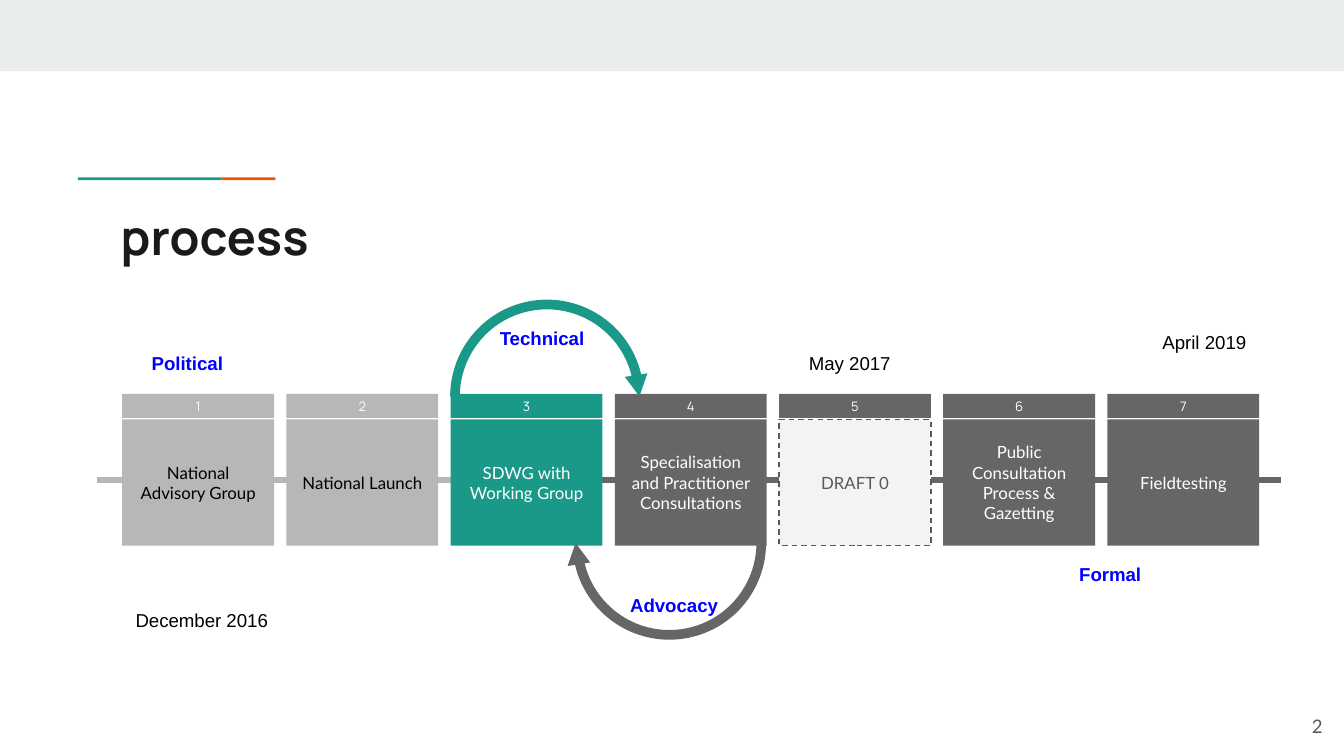
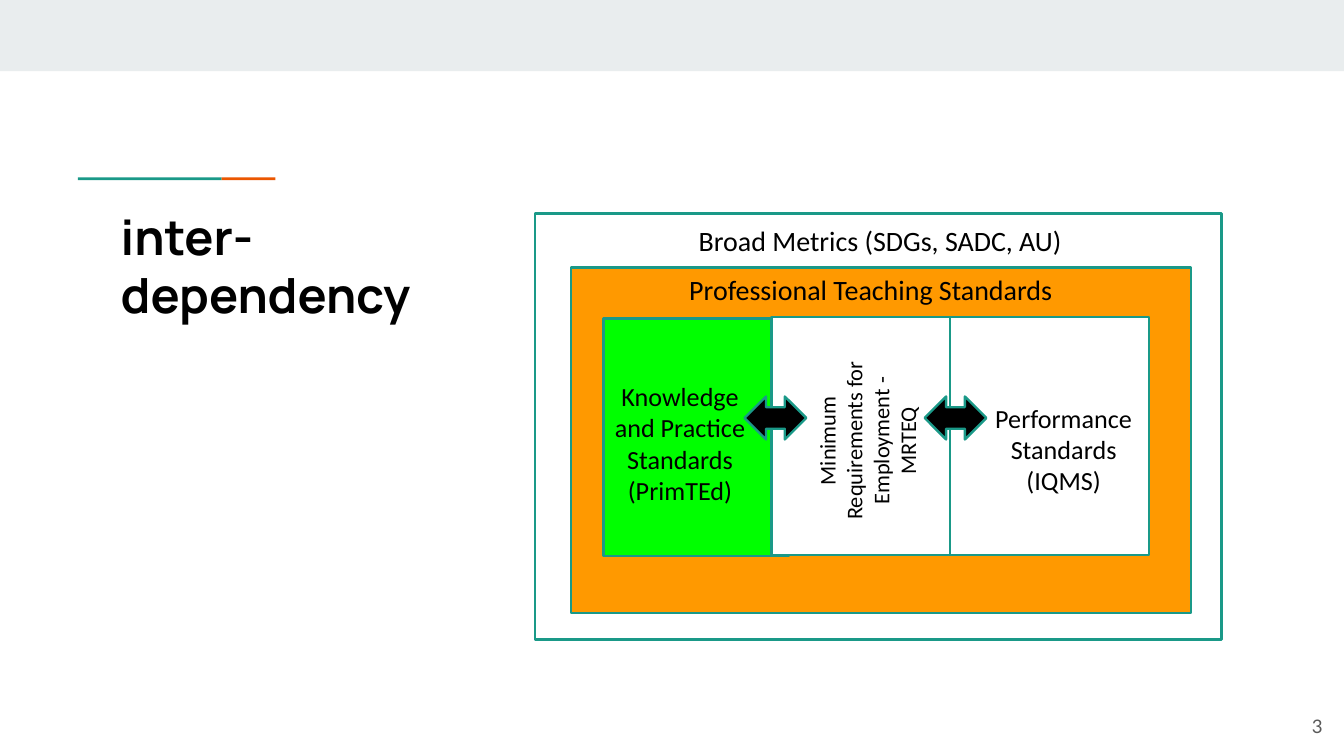
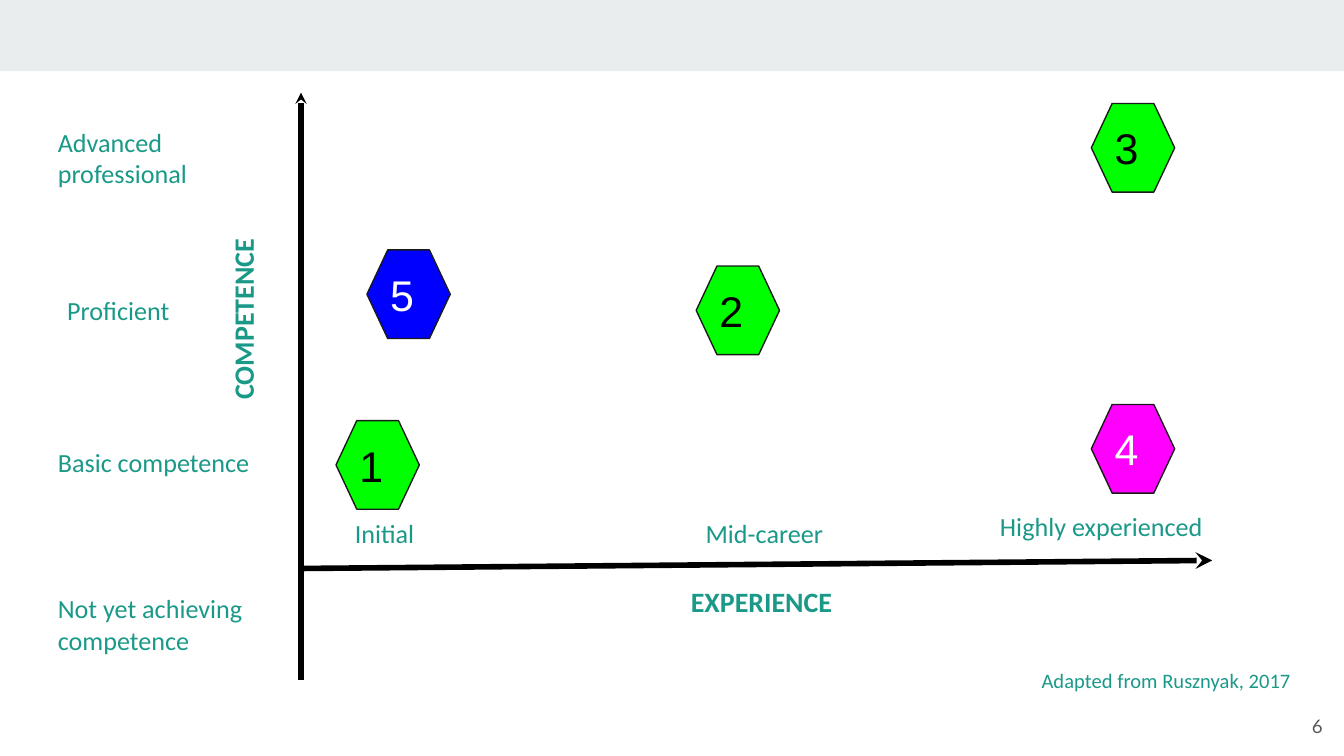
from pptx import Presentation
from pptx.dml.color import RGBColor
from pptx.enum.dml import MSO_LINE
from pptx.enum.shapes import MSO_CONNECTOR, MSO_SHAPE as SHAPE
from pptx.enum.text import MSO_ANCHOR as ANCHOR, PP_ALIGN as ALIGN
from pptx.oxml.ns import qn
from pptx.util import Inches, Pt
from lxml.etree import SubElement

WIDTH = 10
HEIGHT = WIDTH * 9 / 16
COLORS = {
    "white": "FFFFFF", "black": "000000", "ink": "1A1A1A", "band": "E9EDEE",
    "teal": "1A9988", "rust": "EB5600", "light": "B7B7B7", "dark": "666666",
    "text": "595959", "draft": "F3F3F3", "blue": "0000FF", "green": "00FF00",
    "orange": "FF9900", "magenta": "FF00FF",
}
WIDE_INSETS, HEXAGON_INSETS, TIGHT_INSETS = (0.1, 0.1), (0.07, 0.07), (0.07, 0.04)

# Process: name, fill, text colour
STEPS = [
    ("National Advisory Group", "light", "black"),
    ("National Launch", "light", "black"),
    ("SDWG with Working Group", "teal", "white"),
    ("Specialisation and Practitioner Consultations", "dark", "white"),
    ("DRAFT 0", "draft", "text"),
    ("Public Consultation Process & Gazetting", "dark", "white"),
    ("Fieldtesting", "dark", "white"),
]
FIRST_STEP, LAST_STEP, STEP_WIDTH = 0.91, 8.24, 1.13
STEP_PITCH = (LAST_STEP - FIRST_STEP) / (len(STEPS) - 1)
# Colour, arc left and top, arc rotation, arrowhead left and top, arrowhead rotation
LOOPS = [
    ("teal", 3.35, 2.23, 0, 4.66, 2.79, 171.1),
    ("dark", 4.26, 3.32, 180, 4.21, 4.04, 351.1),
]
DATES = [
    ("December 2016", (0.91, 4.41, 2.01, 0.67), ALIGN.LEFT),
    ("April 2019", (7.02, 2.34, 2.35, 0.59), ALIGN.RIGHT),
    ("May 2017", (5.92, 2.5, 0.88, 0.43), ALIGN.LEFT),
]
PHASES = [
    ("Technical", 3.62, 2.31, ALIGN.LEFT),
    ("Advocacy", 4.59, 4.3, ALIGN.LEFT),
    ("Political", 1.03, 2.5, ALIGN.LEFT),
    ("Formal", 7.82, 4.07, ALIGN.CENTER),
]

# Inter-dependency: frame, fill, label, label box, size, rotation; back to front
STANDARDS = [
    ((3.98, 1.59, 5.11, 3.17), "white", "Broad Metrics (SDGs, SADC, AU)",
     (5.03, 1.62, 3.04, 0.27), 15, 0),
    ((4.25, 1.99, 4.61, 2.57), "orange", "Professional Teaching Standards",
     (4.55, 1.99, 3.86, 0.27), 15, 0),
    ((4.49, 2.37, 1.38, 1.77), "green", "Knowledge and Practice Standards (PrimTEd)",
     (4.39, 2.79, 1.34, 1.24), 14, 0),
    ((5.74, 2.36, 1.48, 1.77), "white", "Minimum Requirements for Employment - MRTEQ",
     (5.6, 2.94, 1.5, 0.68), 12, 270),
    ((7.07, 2.36, 1.48, 1.77), "white", "Performance Standards (IQMS)",
     (7.28, 2.95, 1.27, 0.78), 14, 0),
]
LINK_LEFTS = (5.54, 6.88)

# Competence against experience
LEVELS = [
    ("Advanced professional", 0.36, 0.9, 0.53),
    ("Proficient", 0.43, 2.15, 0.3),
    ("Basic competence", 0.36, 3.28, 0.53),
    ("Not yet achieving competence", 0.36, 4.37, 0.76),
]
STAGES = [
    ("Initial", 2.57, 3.81, 0.67),
    ("Mid-career", 5.18, 3.81, 1.38),
    ("Highly experienced", 7.37, 3.76, 1.81),
]
TEACHERS = [
    (2.5, 3.13, "green", "black"),
    (5.18, 1.98, "green", "black"),
    (8.12, 0.77, "green", "black"),
    (8.12, 3.01, "magenta", "white"),
    (2.73, 1.86, "blue", "white"),
]


def color(name):
    return RGBColor.from_string(COLORS[name])


def write(shape, text, font, size, text_color, bold=False, align=ALIGN.LEFT,
          anchor=ANCHOR.TOP, insets=WIDE_INSETS, spacing=None):
    frame = shape.text_frame
    frame.text = text
    frame.word_wrap = True
    frame.vertical_anchor = anchor
    frame.margin_left = frame.margin_right = Inches(insets[0])
    frame.margin_top = frame.margin_bottom = Inches(insets[1])
    paragraph = frame.paragraphs[0]
    paragraph.alignment = align
    paragraph.line_spacing = spacing
    run_font = paragraph.runs[0].font
    run_font.name, run_font.size, run_font.bold = font, Pt(size), bold
    run_font.color.rgb = color(text_color)


def add_text(slide, box, text, font, size, text_color, rotation=0, **style):
    shape = slide.shapes.add_textbox(*map(Inches, box))
    shape.rotation = rotation
    write(shape, text, font, size, text_color, **style)


def add_shape(slide, kind, box, fill, outline=None, weight=1.25, rotation=0):
    shape = slide.shapes.add_shape(kind, *map(Inches, box))
    shape.shadow.inherit = False
    shape.rotation = rotation
    shape.fill.solid()
    shape.fill.fore_color.rgb = color(fill)
    if outline:
        shape.line.color.rgb = color(outline)
        shape.line.width = Pt(weight)
    else:
        shape.line.fill.background()
    return shape


def add_line(slide, start, end, line_color, arrow=None, arrow_size="med"):
    """Draw a straight line; arrow is headEnd (at start) or tailEnd (at end)."""
    line = slide.shapes.add_connector(
        MSO_CONNECTOR.STRAIGHT, *map(Inches, (*start, *end)))
    line.line.color.rgb = color(line_color)
    line.line.width = Pt(3)
    properties = line.element.spPr
    if arrow:
        SubElement(properties.find(qn("a:ln")), qn(f"a:{arrow}"),
                   type="stealth", w=arrow_size, len=arrow_size)
    SubElement(properties, qn("a:effectLst"))


def add_slide(presentation, number):
    slide = presentation.slides.add_slide(presentation.slide_layouts[6])
    add_shape(slide, SHAPE.RECTANGLE, (0, 0, WIDTH, 0.53), "band")
    add_text(slide, (9.34, 5.19, 0.6, 0.43), str(number), "Lato", 10, "text",
             align=ALIGN.RIGHT, anchor=ANCHOR.MIDDLE)
    return slide


def add_title(slide, text, width, height, text_color):
    add_shape(slide, SHAPE.RECTANGLE, (0.58, 1.32, 1.07, 0.02), "teal")
    add_shape(slide, SHAPE.RECTANGLE, (1.65, 1.32, 0.4, 0.02), "rust")
    add_text(slide, (0.8, 1.44, width, height), text, "Manrope", 26,
             text_color, bold=True)


def build_process(presentation):
    slide = add_slide(presentation, 2)
    add_title(slide, "process", 8.41, 0.59, "ink")
    add_line(slide, (4.45, 3.57), (9.53, 3.57), "dark")
    add_line(slide, (0.72, 3.57), (4.24, 3.57), "light")
    centred = {"align": ALIGN.CENTER, "anchor": ANCHOR.MIDDLE}
    for index, (name, fill, text_color) in enumerate(STEPS):
        left = FIRST_STEP + index * STEP_PITCH
        is_draft = fill == "draft"
        body = add_shape(slide, SHAPE.RECTANGLE, (left, 3.12, STEP_WIDTH, 0.94),
                         fill, "text" if is_draft else None, 0.75)
        if is_draft:
            body.line.dash_style = MSO_LINE.DASH
        write(body, name, "Lato", 9, text_color, **centred)
        header = add_shape(slide, SHAPE.RECTANGLE, (left, 2.93, STEP_WIDTH, 0.18),
                           "dark" if is_draft else fill)
        write(header, str(index + 1), "Manrope", 7, "white", **centred)
    for fill, left, top, turn, head_left, head_top, head_turn in LOOPS:
        arc = add_shape(slide, SHAPE.BLOCK_ARC, (left, top, 1.44, 1.44), fill,
                        rotation=turn)
        for index, value in enumerate((108, 211.46, 0.05)):
            arc.adjustments[index] = value
        add_shape(slide, SHAPE.ISOSCELES_TRIANGLE, (head_left, head_top, 0.17, 0.16),
                  fill, rotation=head_turn)
    for text, box, align in DATES:
        add_text(slide, box, text, "Arial", 10, "black", align=align, spacing=1.15)
    for text, left, top, align in PHASES:
        add_text(slide, (left, top, 0.88, 0.43), text, "Arial", 10, "blue",
                 bold=True, align=align, spacing=1.15)


def build_interdependency(presentation):
    slide = add_slide(presentation, 3)
    add_title(slide, "inter- dependency", 2.64, 1.08, "black")
    for frame, fill, label, label_box, size, rotation in STANDARDS:
        add_shape(slide, SHAPE.RECTANGLE, frame, fill, "teal")
        add_text(slide, label_box, label, "Calibri", size, "black", rotation,
                 align=ALIGN.CENTER, insets=TIGHT_INSETS)
    for left in LINK_LEFTS:
        add_shape(slide, SHAPE.LEFT_RIGHT_ARROW, (left, 2.95, 0.46, 0.32),
                  "black", "teal")


def build_competence(presentation):
    slide = add_slide(presentation, 6)
    add_line(slide, (2.24, 0.69), (2.24, 5.06), "black", "headEnd", "sm")
    add_line(slide, (2.24, 4.23), (9.02, 4.17), "black", "tailEnd")

    def add_label(box, text, size=14, **style):
        add_text(slide, box, text, "Calibri", size, "teal",
                 insets=TIGHT_INSETS, **style)

    for text, left, top, height in LEVELS:
        add_label((left, top, 1.81, height), text)
    for text, left, top, width in STAGES:
        add_label((left, top, width, 0.33), text)
    add_label((5.07, 4.31, 1.61, 0.33), "EXPERIENCE", 15, bold=True)
    add_label((1, 2.11, 1.81, 0.53), "COMPETENCE", 15, bold=True, rotation=270,
              align=ALIGN.CENTER)
    add_label((7.68, 4.93, 2.05, 0.25), "Adapted from Rusznyak, 2017", 11)
    for number, (left, top, fill, text_color) in enumerate(TEACHERS, 1):
        hexagon = add_shape(slide, SHAPE.HEXAGON, (left, top, 0.62, 0.66), fill,
                            "ink", 0.75)
        write(hexagon, str(number), "Arial", 23, text_color,
              anchor=ANCHOR.MIDDLE, insets=HEXAGON_INSETS)


def main():
    presentation = Presentation()
    presentation.slide_width, presentation.slide_height = Inches(WIDTH), Inches(HEIGHT)
    build_process(presentation)
    build_interdependency(presentation)
    build_competence(presentation)
    presentation.save("out.pptx")


if __name__ == "__main__":
    main()
